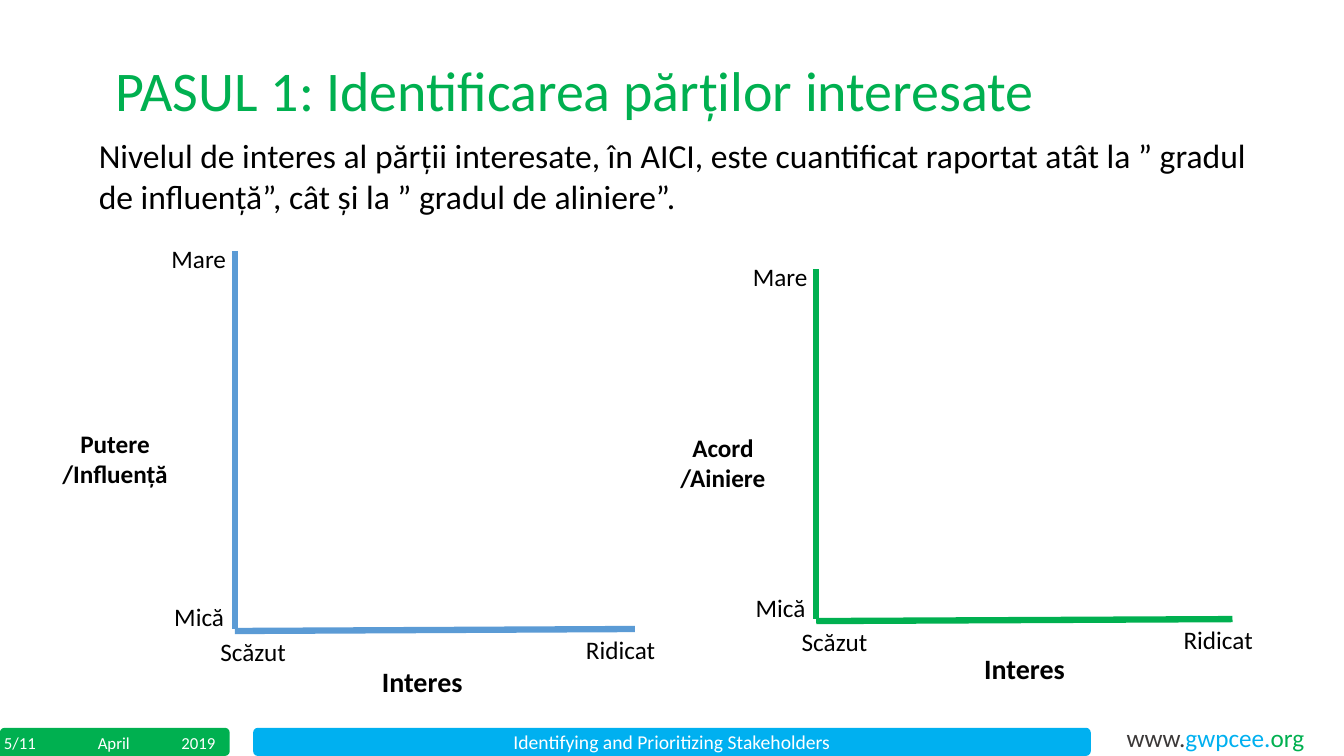
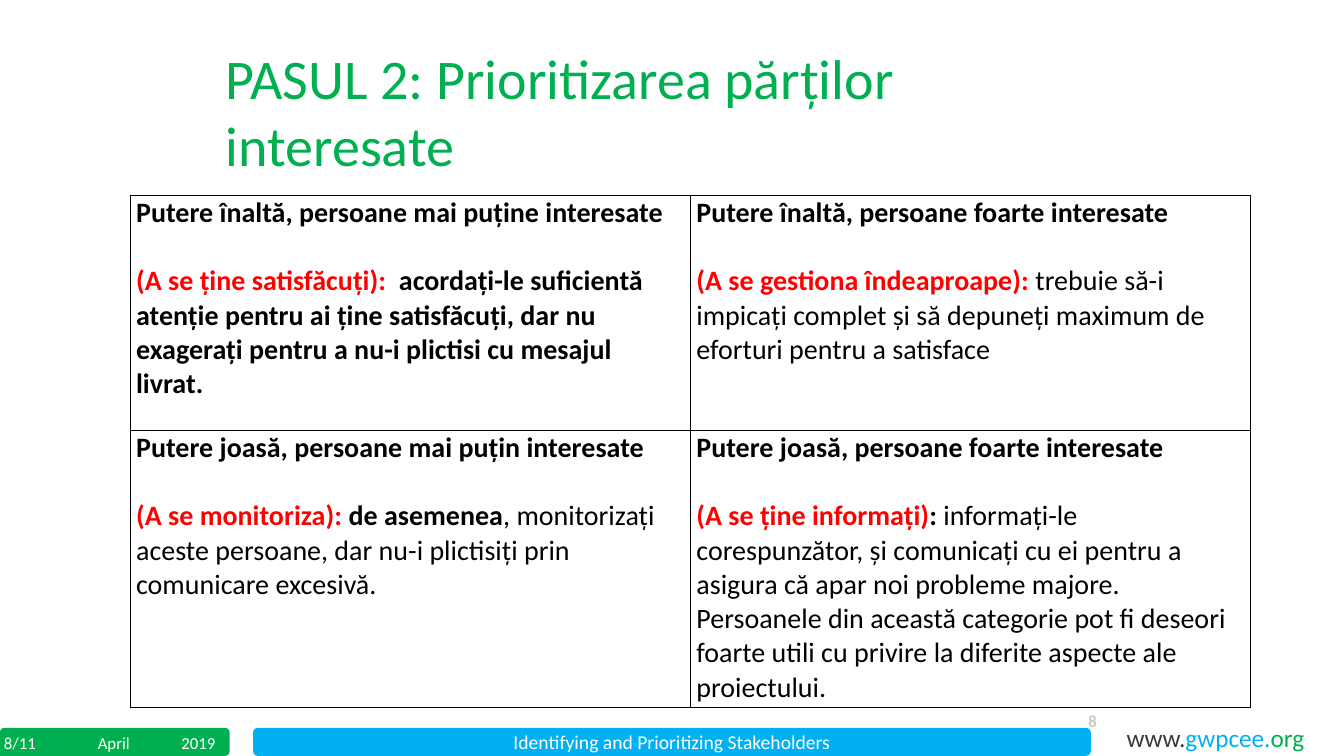
from dataclasses import dataclass

import lxml.etree
import pptx
import pptx.dml.color
import pptx.enum.shapes
import pptx.enum.text
import pptx.oxml.ns
import pptx.util

Cm = pptx.util.Cm
Pt = pptx.util.Pt
qn = pptx.oxml.ns.qn
PP_ALIGN = pptx.enum.text.PP_ALIGN
ANCHOR = pptx.enum.text.MSO_ANCHOR
SHAPE = pptx.enum.shapes.MSO_SHAPE


@dataclass(frozen=True)
class Theme:
    font: str = "Calibri"
    green: str = "00B050"
    sky: str = "00B0F0"
    blue: str = "5B9BD5"
    red: str = "FF0000"
    black: str = "000000"
    white: str = "FFFFFF"
    dark: str = "3B3838"
    pale: str = "C9C9C8"
    title: int = 40
    body: int = 24
    strong: int = 20
    label: int = 18
    band: int = 14
    small: int = 12


T = Theme()


@dataclass(frozen=True)
class Box:
    left: float
    top: float
    width: float
    height: float

    def lengths(self) -> tuple:
        return Cm(self.left), Cm(self.top), Cm(self.width), Cm(self.height)


@dataclass(frozen=True)
class Span:
    text: str
    color: str = T.black
    bold: bool = False


@dataclass(frozen=True)
class Axes:
    """A pair of axes: origin (x, base), ends (top, right), name centres."""
    x: float
    top: float
    right: float
    base: float
    color: str
    name: str
    name_x: float
    name_y: float
    name_width: float
    interest_x: float
    interest_y: float


@dataclass(frozen=True)
class Quadrant:
    heading: str
    spans: tuple


# Text helpers
def style_run(r, size: int, color: str, bold: bool) -> None:
    r.font.name = T.font
    r.font.size = Pt(size)
    r.font.bold = bold
    r.font.color.rgb = pptx.dml.color.RGBColor.from_string(color)


def add_spans(p, spans: tuple, size: int) -> None:
    for span in spans:
        r = p.add_run()
        r.text = span.text
        style_run(r, size, span.color, span.bold)


def set_text(tf, text: str, size: int, color: str, bold: bool, align) -> None:
    tf.text = text
    tf.word_wrap = True
    for p in tf.paragraphs:
        p.alignment = align
        for r in p.runs:
            style_run(r, size, color, bold)


def add_text(slide, box: Box, text: str, size: int, color: str = T.black,
             bold: bool = False, align=PP_ALIGN.LEFT, anchor=ANCHOR.TOP):
    sp = slide.shapes.add_textbox(*box.lengths())
    set_text(sp.text_frame, text, size, color, bold, align)
    sp.text_frame.vertical_anchor = anchor
    return sp


def add_centred(slide, x: float, y: float, text: str, size: int = T.label,
                bold: bool = False, width: float = 2.8, height: float = 1.02) -> None:
    box = Box(x - width / 2, y - height / 2, width, height)
    add_text(slide, box, text, size, bold=bold, align=PP_ALIGN.CENTER)


def add_title(slide, left: float, top: float, width: float, text: str) -> None:
    add_text(slide, Box(left, top, width, 2.46), text, T.title, T.green,
             anchor=ANCHOR.MIDDLE)


# Shape helpers
def add_band(slide, box: Box, color: str, kind=SHAPE.ROUNDED_RECTANGLE):
    sp = slide.shapes.add_shape(kind, *box.lengths())
    sp.shadow.inherit = False
    sp.fill.solid()
    sp.fill.fore_color.rgb = pptx.dml.color.RGBColor.from_string(color)
    sp.line.fill.background()
    return sp


def add_line(slide, x1: float, y1: float, x2: float, y2: float, color: str) -> None:
    line = slide.shapes.add_connector(pptx.enum.shapes.MSO_CONNECTOR.STRAIGHT,
                                      Cm(x1), Cm(y1), Cm(x2), Cm(y2))
    line.line.color.rgb = pptx.dml.color.RGBColor.from_string(color)
    line.line.width = Pt(4.5)
    lxml.etree.SubElement(line._element.spPr, qn("a:effectLst"))


# Footer shared by all slides
def add_footer(slide, page: str) -> None:
    add_band(slide, Box(0, 18.34, 5.79, 0.71), T.green)
    sp = add_band(slide, Box(6.38, 18.34, 21.11, 0.71), T.sky)
    set_text(sp.text_frame, "Identifying and Prioritizing Stakeholders",
             T.band, T.white, False, PP_ALIGN.CENTER)
    sp.text_frame.vertical_anchor = ANCHOR.MIDDLE
    add_band(slide, Box(0, 18.42, 1.32, 0.63), T.green, SHAPE.RECTANGLE)
    add_text(slide, Box(1.55, 18.34, 2.64, 0.76), "April", T.small, T.white,
             align=PP_ALIGN.CENTER, anchor=ANCHOR.MIDDLE)
    add_text(slide, Box(4.32, 18.34, 1.47, 0.76), "2019", T.small, T.white)
    add_text(slide, Box(-0.15, 18.34, 1.88, 0.76), page, T.small, T.white)
    sp = add_text(slide, Box(28.14, 18.08, 5.1, 1.02), "", T.label)
    add_spans(sp.text_frame.paragraphs[0],
              (Span("www.", T.dark), Span("gwpcee.", T.sky), Span("org", T.green)),
              T.label)


def new_slide(prs, page: str):
    slide = prs.slides.add_slide(prs.slide_layouts[6])
    add_footer(slide, page)
    return slide


# Slide 1: two pairs of axes
AXES = (
    Axes(5.92, 6.32, 16, 15.85, T.blue, "Putere\n/Influență",
         2.9, 11.57, 3.35, 10.64, 17.17),
    Axes(20.57, 6.78, 31.06, 15.6, T.green, "Acord /Ainiere",
         18.22, 11.67, 3.68, 25.82, 16.84),
)


def add_axes(slide, a: Axes) -> None:
    add_line(slide, a.x, a.top, a.x, a.base, a.color)
    add_line(slide, a.right, a.base, a.x, a.base + 0.05, a.color)
    add_centred(slide, a.name_x, a.name_y, a.name, bold=True,
                width=a.name_width, height=1.8)
    add_centred(slide, a.interest_x, a.interest_y, "Interes", T.strong, True,
                width=3.3, height=1.12)
    for text, x, y in (("Mică", a.x - 0.9, a.base - 0.3),
                       ("Scăzut", a.x + 0.46, a.base + 0.56),
                       ("Mare", a.x - 0.91, a.top + 0.19),
                       ("Ridicat", a.right - 0.36, a.base + 0.51)):
        add_centred(slide, x, y, text)


def build_identification(prs) -> None:
    slide = new_slide(prs, "5/11")
    for a in AXES:
        add_axes(slide, a)
    add_text(slide, Box(2.24, 3.28, 30.2, 2.31),
             "Nivelul de interes al părții interesate, în AICI, este cuantificat "
             "raportat atât la ” gradul de influență”, cât și la ” gradul de aliniere”.",
             T.body)
    add_title(slide, 2.67, 1.02, 23.67, "PASUL 1: Identificarea părților interesate")


# Slide 2: priority table
QUADRANTS = (
    (Quadrant("Putere înaltă, persoane mai puține interesate", (
        Span("(A se ține satisfăcuți): ", T.red, True),
        Span(" acordați-le suficientă atenție pentru ai ține satisfăcuți, dar nu "
             "exagerați pentru a nu-i plictisi cu mesajul livrat.", bold=True))),
     Quadrant("Putere înaltă, persoane foarte interesate", (
         Span("(A se gestiona îndeaproape): ", T.red, True),
         Span("trebuie să-i impicați complet și să depuneți maximum de eforturi "
              "pentru a satisface")))),
    (Quadrant("Putere joasă, persoane mai puțin interesate", (
        Span("(A se monitoriza): ", T.red, True),
        Span("de asemenea", bold=True),
        Span(", monitorizați aceste persoane, dar nu-i plictisiți prin "
             "comunicare excesivă."))),
     Quadrant("Putere joasă, persoane foarte interesate", (
         Span("(A se ține informați)", T.red, True),
         Span(":", bold=True),
         Span(" informați-le corespunzător, și comunicați cu ei pentru a asigura "
              "că apar noi probleme majore. Persoanele din această categorie pot fi "
              "deseori foarte utili cu privire la diferite aspecte ale "
              "proiectului.")))),
)
ROW_HEIGHTS = (5.92, 6.98)
COLUMN_WIDTH = 14.12


def set_borders(cell) -> None:
    tc_pr = cell._tc.get_or_add_tcPr()
    for side in ("a:lnL", "a:lnR", "a:lnT", "a:lnB"):
        ln = lxml.etree.SubElement(tc_pr, qn(side), w=str(Pt(1)))
        fill = lxml.etree.SubElement(ln, qn("a:solidFill"))
        lxml.etree.SubElement(fill, qn("a:srgbClr"), val=T.black)


def fill_cell(cell, quadrant: Quadrant) -> None:
    set_borders(cell)
    cell.fill.background()
    cell.margin_left = cell.margin_right = Cm(0.15)
    cell.margin_top = cell.margin_bottom = Cm(0)
    tf = cell.text_frame
    set_text(tf, quadrant.heading, T.strong, T.black, True, PP_ALIGN.LEFT)
    p = tf.add_paragraph()
    p.space_before = Pt(24.4)
    add_spans(p, quadrant.spans, T.strong)


def add_priority_table(slide) -> None:
    box = Box(3.28, 4.93, 2 * COLUMN_WIDTH, sum(ROW_HEIGHTS))
    table = slide.shapes.add_table(2, 2, *box.lengths()).table
    table.first_row = table.horz_banding = False
    for column in table.columns:
        column.width = Cm(COLUMN_WIDTH)
    for i, (height, quadrants) in enumerate(zip(ROW_HEIGHTS, QUADRANTS)):
        table.rows[i].height = Cm(height)
        for j, quadrant in enumerate(quadrants):
            fill_cell(table.cell(i, j), quadrant)


def build_prioritization(prs) -> None:
    slide = new_slide(prs, "8/11")
    add_text(slide, Box(26.82, 17.65, 1.07, 1.02), "8", T.small, T.pale, True,
             PP_ALIGN.RIGHT, ANCHOR.MIDDLE)
    add_priority_table(slide)
    add_title(slide, 5.44, 1.55, 23.24, "PASUL 2: Prioritizarea părților interesate")


def main() -> None:
    prs = pptx.Presentation()
    prs.slide_width = Cm(33.87)
    prs.slide_height = Cm(19.05)
    build_identification(prs)
    build_prioritization(prs)
    prs.save("out.pptx")


if __name__ == "__main__":
    main()
